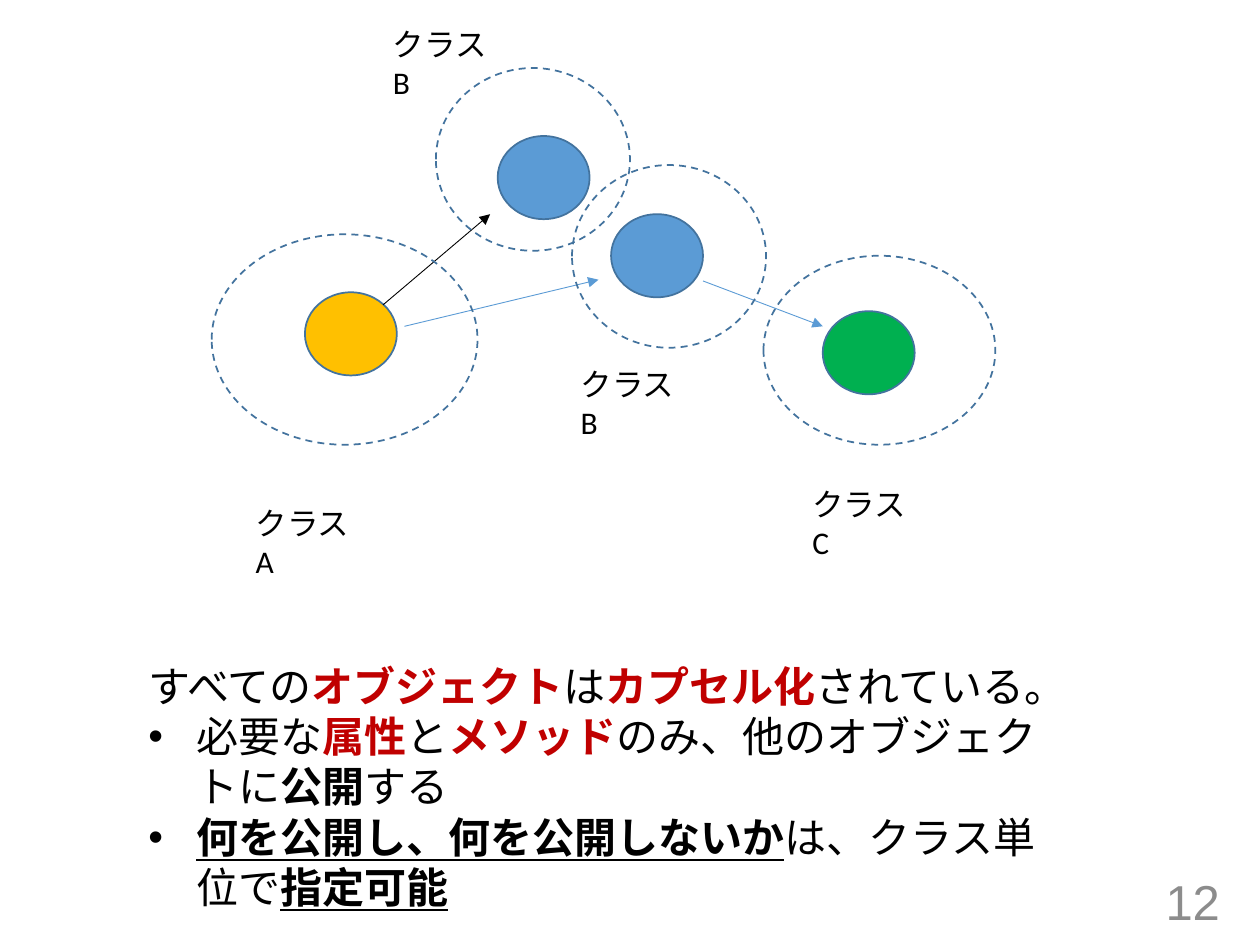
from pptx import Presentation
from pptx.dml.color import RGBColor
from pptx.enum.dml import MSO_LINE
from pptx.enum.shapes import MSO_CONNECTOR, MSO_SHAPE
from pptx.enum.text import MSO_ANCHOR, PP_ALIGN
from pptx.oxml.ns import qn
from pptx.util import Inches, Pt
from lxml.etree import SubElement

COLORS = {
    "text": "000000", "key": "C00000", "number": "8C8C8C", "outline": "43739E",
    "blue": "5B9BD5", "yellow": "FFC000", "green": "00B050",
}
OBJECT_SIZE = (0.73, 0.66)
CAPSULE_B_SIZE = (1.54, 1.45)
INDENT = 0.38

OBJECTS = [(3.95, 1.08, "blue"), (4.85, 1.7, "blue"),
           (2.42, 2.32, "yellow"), (6.53, 2.47, "green")]
CAPSULES = [(1.68, 1.86, 2.11, 1.67), (3.46, 0.54, *CAPSULE_B_SIZE),
            (6.06, 2.03, 1.84, 1.5), (4.54, 1.31, *CAPSULE_B_SIZE)]
MESSAGES = [((3.04, 2.42), (3.89, 1.7), "text"),
            ((3.21, 2.59), (4.75, 2.22), "blue"),
            ((5.58, 2.23), (6.53, 2.59), "blue")]
LABELS = [(1.93, 3.95, "クラスA"), (4.51, 2.85, "クラスB"),
          (6.35, 3.8, "クラスC"), (3.02, 0.15, "クラスB")]

# Each paragraph: bulleted or not, then (text, style) pairs.
SUMMARY = [
    (False, [("すべての", ""), ("オブジェクト", "key"), ("は", ""),
             ("カプセル化", "key"), ("されている。", "")]),
    (True, [("必要な", ""), ("属性", "key"), ("と", ""), ("メソッド", "key"),
            ("のみ、他のオブジェクトに", ""), ("公開", "bold"), ("する", "")]),
    (True, [("何を公開し、何を公開しないか", "underline"),
            ("は、クラス単位で", ""), ("指定可能", "underline")]),
]


def color(name):
    return RGBColor.from_string(COLORS[name])


def set_font(font, name, size, color_name):
    font.name = name
    font.size = Pt(size)
    font.color.rgb = color(color_name)


def add_ellipse(slide, left, top, width, height, fill=None):
    """A filled object, or a dashed capsule when there is no fill."""
    ellipse = slide.shapes.add_shape(
        MSO_SHAPE.OVAL, *map(Inches, (left, top, width, height)))
    ellipse.shadow.inherit = False
    ellipse.line.color.rgb = color("outline")
    ellipse.line.width = Pt(1)
    if fill:
        ellipse.fill.solid()
        ellipse.fill.fore_color.rgb = color(fill)
    else:
        ellipse.fill.background()
        ellipse.line.dash_style = MSO_LINE.DASH


def add_arrow(slide, start, end, color_name):
    arrow = slide.shapes.add_connector(
        MSO_CONNECTOR.STRAIGHT, *map(Inches, (*start, *end)))
    arrow.line.color.rgb = color(color_name)
    arrow.line.width = Pt(0.5)
    SubElement(arrow.line._get_or_add_ln(), qn("a:tailEnd"), type="triangle")
    SubElement(arrow._element.spPr, qn("a:effectLst"))


def add_text_box(slide, left, top, width, height):
    box = slide.shapes.add_textbox(*map(Inches, (left, top, width, height)))
    box.text_frame.word_wrap = True
    return box.text_frame


def add_label(slide, left, top, text):
    frame = add_text_box(slide, left, top, 1, 0.4)
    frame.text = text
    set_font(frame.paragraphs[0].runs[0].font, "Calibri", 18, "text")


def add_bullet(paragraph):
    properties = paragraph._p.get_or_add_pPr()
    properties.set("marL", str(Inches(INDENT)))
    properties.set("indent", str(-Inches(INDENT)))
    SubElement(properties, qn("a:buFont"), typeface="Arial")
    SubElement(properties, qn("a:buChar"), char="•")


def add_summary(slide):
    frame = add_text_box(slide, 1.08, 5.19, 7.32, 2.12)
    for index, (bulleted, spans) in enumerate(SUMMARY):
        paragraph = frame.add_paragraph() if index else frame.paragraphs[0]
        if bulleted:
            add_bullet(paragraph)
        for text, style in spans:
            span = paragraph.add_run()
            span.text = text
            set_font(span.font, "Noto Sans CJK JP", 24,
                     "key" if style == "key" else "text")
            span.font.bold = bool(style)
            span.font.underline = style == "underline"


def add_page_number(slide, number):
    frame = add_text_box(slide, 7.53, 6.95, 2.25, 0.4)
    frame.vertical_anchor = MSO_ANCHOR.MIDDLE
    frame.text = number
    paragraph = frame.paragraphs[0]
    paragraph.alignment = PP_ALIGN.RIGHT
    set_font(paragraph.runs[0].font, "Arial", 28, "number")


def main():
    deck = Presentation()
    deck.slide_width, deck.slide_height = Inches(10), Inches(7.5)
    slide = deck.slides.add_slide(deck.slide_layouts[6])
    add_page_number(slide, "12")
    for left, top, fill in OBJECTS:
        add_ellipse(slide, left, top, *OBJECT_SIZE, fill)
    for message in MESSAGES:
        add_arrow(slide, *message)
    for capsule in CAPSULES:
        add_ellipse(slide, *capsule)
    for label in LABELS:
        add_label(slide, *label)
    add_summary(slide)
    deck.save("out.pptx")


if __name__ == "__main__":
    main()
